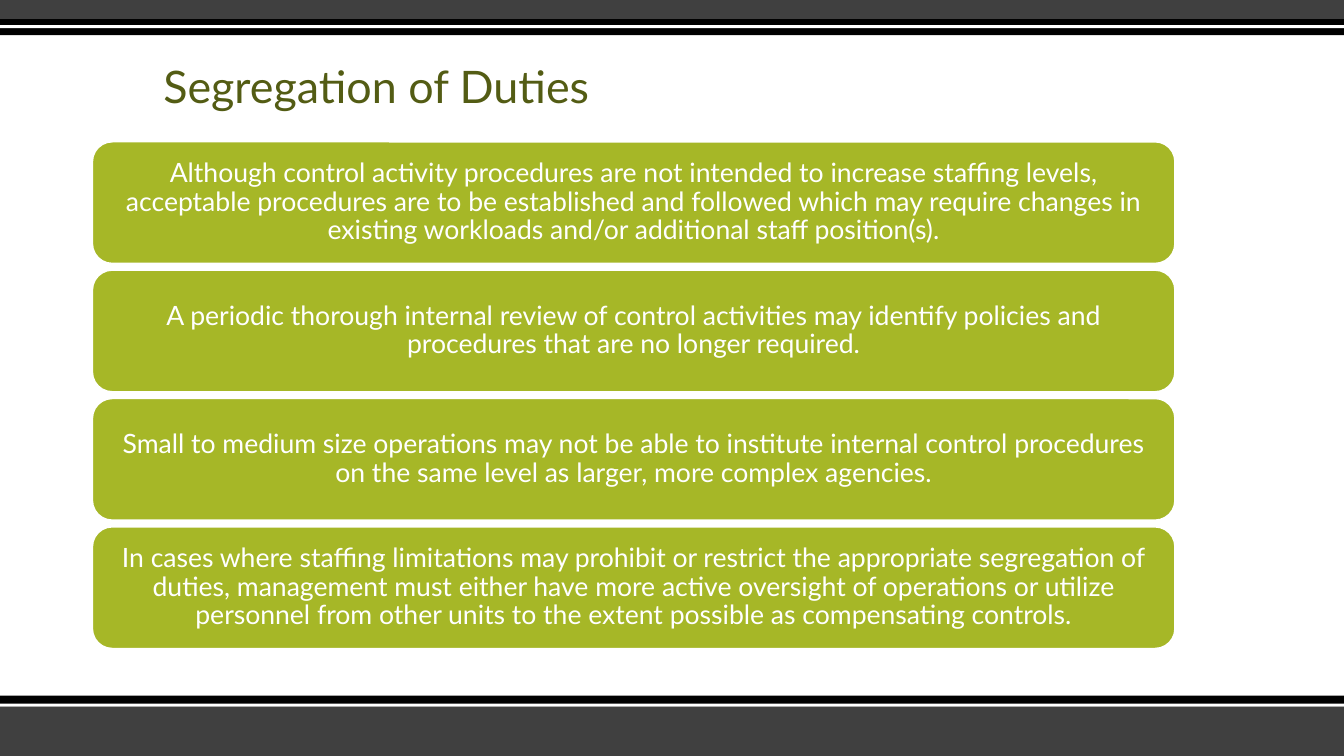
from dataclasses import dataclass

from pptx import Presentation
from pptx.dml.color import RGBColor as Rgb
from pptx.enum.shapes import MSO_SHAPE as Shape
from pptx.enum.text import MSO_ANCHOR as Anchor, MSO_AUTO_SIZE as Auto, PP_ALIGN as Align
from pptx.util import Inches, Pt


@dataclass(frozen=True)
class Theme:
    font: str = "Lato"
    gray: str = "404040"
    black: str = "000000"
    white: str = "FFFFFF"
    green: str = "A6B727"
    olive: str = "535C14"
    head: int = 32
    body: int = 19


def write(frame, text, font, size, color, align, anchor, pad):
    frame.word_wrap = True
    frame.auto_size = Auto.NONE
    frame.vertical_anchor = anchor
    left, top, right, low = pad
    frame.margin_left, frame.margin_right = Inches(left), Inches(right)
    frame.margin_top, frame.margin_bottom = Inches(top), Inches(low)
    para = frame.paragraphs[0]
    para.alignment = align
    para.line_spacing = 0.9
    run = para.add_run()
    run.text = text
    run.font.name = font
    run.font.size = Pt(size)
    run.font.color.rgb = Rgb.from_string(color)


class Deck:
    def __init__(self, theme):
        self.theme = theme
        self.file = Presentation()
        self.file.slide_width = Inches(13.33)
        self.file.slide_height = Inches(7.5)
        self.slide = self.file.slides.add_slide(self.file.slide_layouts[5])

    def block(self, kind, box, fill):
        shape = self.slide.shapes.add_shape(kind, *map(Inches, box))
        shape.shadow.inherit = False
        shape.fill.solid()
        shape.fill.fore_color.rgb = Rgb.from_string(fill)
        shape.line.fill.background()
        return shape

    def band(self, top, height, fill):
        self.block(Shape.RECTANGLE, (0, top, 13.33, height), fill)

    def title(self, text):
        look = self.theme
        shape = self.slide.shapes.title
        shape.left, shape.top = Inches(1.5), Inches(0)
        shape.width, shape.height = Inches(10), Inches(1.17)
        write(shape.text_frame, text, font=look.font, size=look.head, color=look.olive,
              align=Align.LEFT, anchor=Anchor.BOTTOM, pad=(0.12, 0.05, 0.1, 0.05))

    def card(self, text, top):
        look = self.theme
        shape = self.block(Shape.ROUNDED_RECTANGLE, (0.91, top, 10.75, 1.22), look.green)
        shape.line.color.rgb = Rgb.from_string(look.white)
        shape.line.width = Pt(2)
        write(shape.text_frame, text, font=look.font, size=look.body, color=look.white,
              align=Align.CENTER, anchor=Anchor.MIDDLE, pad=(0.08,) * 4)


CARDS = [
    "Although control activity procedures are not intended to increase staffing levels, "
    "acceptable procedures are to be established and followed which may require changes in "
    "existing workloads and/or additional staff position(s).",
    "A periodic thorough internal review of control activities may identify policies and "
    "procedures that are no longer required.",
    "Small to medium size operations may not be able to institute internal control procedures "
    "on the same level as larger, more complex agencies.",
    "In cases where staffing limitations may prohibit or restrict the appropriate segregation of "
    "duties, management must either have more active oversight of operations or utilize "
    "personnel from other units to the extent possible as compensating controls.",
]


def main():
    look = Theme()
    deck = Deck(look)
    bands = [
        (7, 0.5, look.gray), (6.9, 0.11, look.black), (6.98, 0.03, look.white),
        (0, 0.19, look.gray), (0.19, 0.16, look.black), (0.25, 0.03, look.white),
    ]
    for top, height, fill in bands:
        deck.band(top, height, fill)
    deck.title("Segregation of Duties")
    first, last = 1.4, 5.22
    step = (last - first) / (len(CARDS) - 1)
    for row, text in enumerate(CARDS):
        deck.card(text, first + row * step)
    deck.file.save("out.pptx")


if __name__ == "__main__":
    main()
